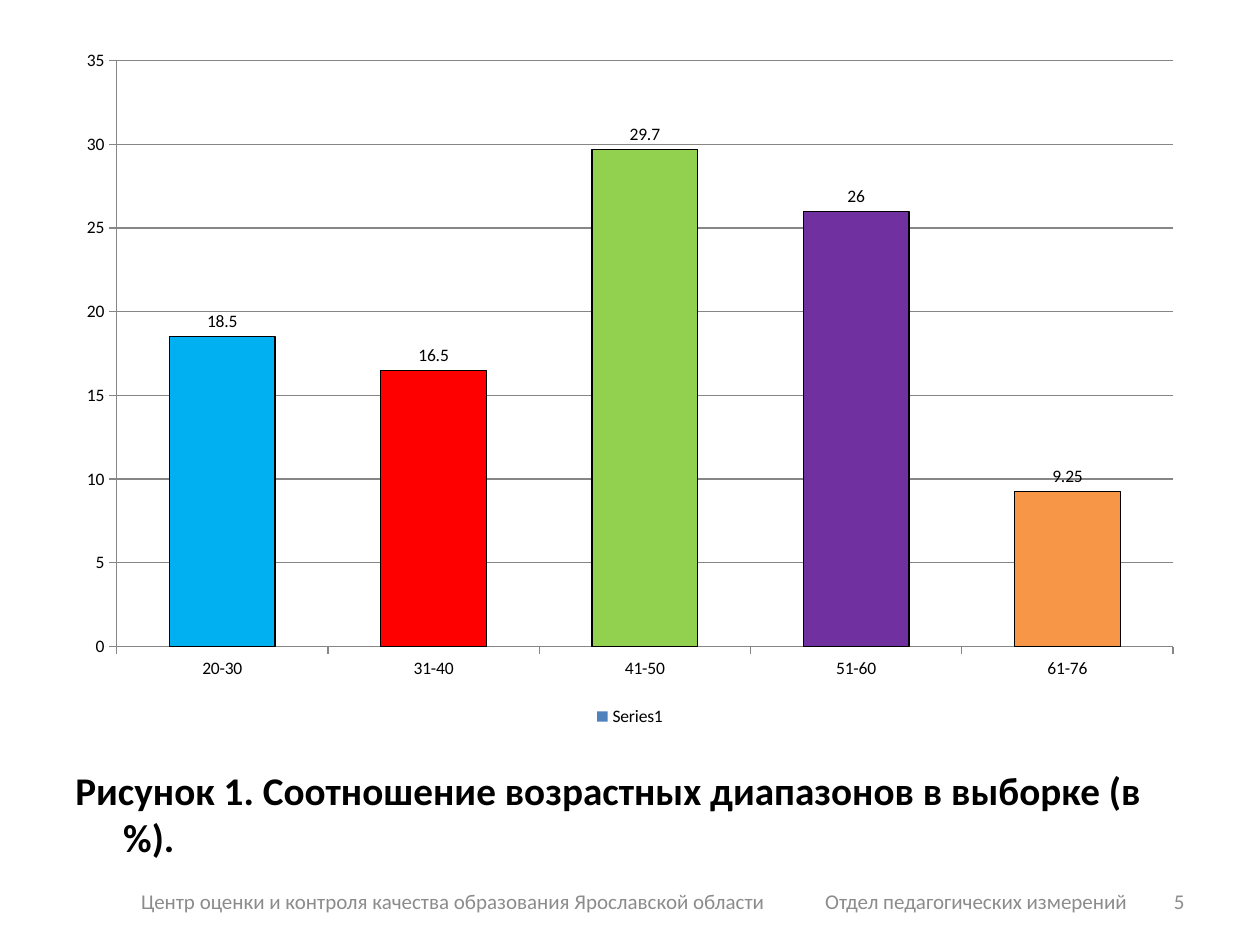
from pptx import Presentation
from pptx.chart.data import CategoryChartData
from pptx.dml.color import RGBColor
from pptx.enum.chart import XL_CHART_TYPE as ChartType, XL_LABEL_POSITION as LabelPos
from pptx.enum.chart import XL_LEGEND_POSITION as LegendPos, XL_TICK_MARK as Tick
from pptx.enum.text import MSO_ANCHOR as Anchor, PP_ALIGN as Align
from pptx.oxml.ns import qn
from pptx.util import Inches, Pt
from lxml.etree import SubElement

WIDTH, HEIGHT = 10, 7.5
FONT = "Calibri"
COLORS = {"text": "000000", "footer": "8C8C8C", "grid": "868686", "series": "4F81BD"}
AGE_GROUPS = {
    "20-30": (18.5, "00B0F0"),
    "31-40": (16.5, "FF0000"),
    "41-50": (29.7, "92D050"),
    "51-60": (26, "7030A0"),
    "61-76": (9.25, "F79646"),
}
CAPTION = "Рисунок 1. Соотношение возрастных диапазонов в выборке (в %)."
CENTRE = "Центр оценки и контроля качества образования Ярославской области"
DEPARTMENT = "Отдел педагогических измерений"


def rgb(name):
    return RGBColor.from_string(COLORS[name])


def area(left, top, width, height):
    """Turn shares of the slide's size into lengths."""
    return (Inches(left * WIDTH), Inches(top * HEIGHT),
            Inches(width * WIDTH), Inches(height * HEIGHT))


def set_font(font, size, color, bold=False):
    font.name, font.size, font.bold = FONT, Pt(size), bold
    font.color.rgb = rgb(color)


def add_text(slide, place, parts, size, color, bold=False, align=Align.LEFT, anchor=Anchor.TOP):
    frame = slide.shapes.add_textbox(*area(*place)).text_frame
    frame.word_wrap = True
    frame.vertical_anchor = anchor
    line = frame.paragraphs[0]
    line.alignment = align
    for part in parts:
        run = line.add_run()
        run.text = part
        set_font(run.font, size, color, bold)
    return frame


def set_hanging_indent(frame, indent):
    props = frame.paragraphs[0]._p.get_or_add_pPr()
    props.set("marL", str(Inches(indent)))
    props.set("indent", str(-Inches(indent)))


def set_tab_stop(frame, position):
    props = frame.paragraphs[0]._p.get_or_add_pPr()
    stops = SubElement(props, qn("a:tabLst"))
    SubElement(stops, qn("a:tab"), pos=str(Inches(position)), algn="l")


def style_axis(axis):
    axis.major_tick_mark, axis.minor_tick_mark = Tick.OUTSIDE, Tick.NONE
    axis.format.line.color.rgb = rgb("grid")
    axis.format.line.width = Pt(0.75)


def add_age_chart(slide, place):
    data = CategoryChartData()
    data.categories = list(AGE_GROUPS)
    data.add_series("Series1", [share for share, _ in AGE_GROUPS.values()])
    chart = slide.shapes.add_chart(ChartType.COLUMN_CLUSTERED, *area(*place), data).chart
    set_font(chart.font, 10, "text")
    chart.has_title = False
    chart.has_legend = True
    chart.legend.position = LegendPos.BOTTOM
    chart.legend.include_in_layout = False

    style_axis(chart.category_axis)
    shares = chart.value_axis
    style_axis(shares)
    shares.minimum_scale, shares.maximum_scale, shares.major_unit = 0, 35, 5
    shares.has_major_gridlines = True
    shares.major_gridlines.format.line.color.rgb = rgb("grid")
    shares.major_gridlines.format.line.width = Pt(0.75)

    plot = chart.plots[0]
    plot.gap_width = 100
    plot.vary_by_categories = False
    columns = plot.series[0]
    columns.format.fill.solid()
    columns.format.fill.fore_color.rgb = rgb("series")
    for index, (_, color) in enumerate(AGE_GROUPS.values()):
        look = columns.points[index].format
        look.fill.solid()
        look.fill.fore_color.rgb = RGBColor.from_string(color)
        look.line.color.rgb = rgb("text")
        look.line.width = Pt(0.75)
    labels = columns.data_labels
    labels.show_value = True
    labels.position = LabelPos.OUTSIDE_END
    set_font(labels.font, 10, "text")


def main():
    prs = Presentation()
    prs.slide_width, prs.slide_height = Inches(WIDTH), Inches(HEIGHT)
    slide = prs.slides.add_slide(prs.slide_layouts[6])

    add_age_chart(slide, (0.051, 0.039, 0.898, 0.735))
    caption = add_text(slide, (0.05, 0.804, 0.9, 0.089), [CAPTION], 22.4, "text", bold=True)
    set_hanging_indent(caption, 0.38)

    footer = add_text(slide, (0.051, 0.927, 0.906, 0.053), [CENTRE, "\t", DEPARTMENT],
                      12, "footer", anchor=Anchor.MIDDLE)
    footer.margin_left = Inches(0.61)
    set_tab_stop(footer, 5.43)
    add_text(slide, (0.717, 0.927, 0.233, 0.053), ["5"], 12, "footer",
             align=Align.RIGHT, anchor=Anchor.MIDDLE)
    prs.save("out.pptx")


if __name__ == "__main__":
    main()
